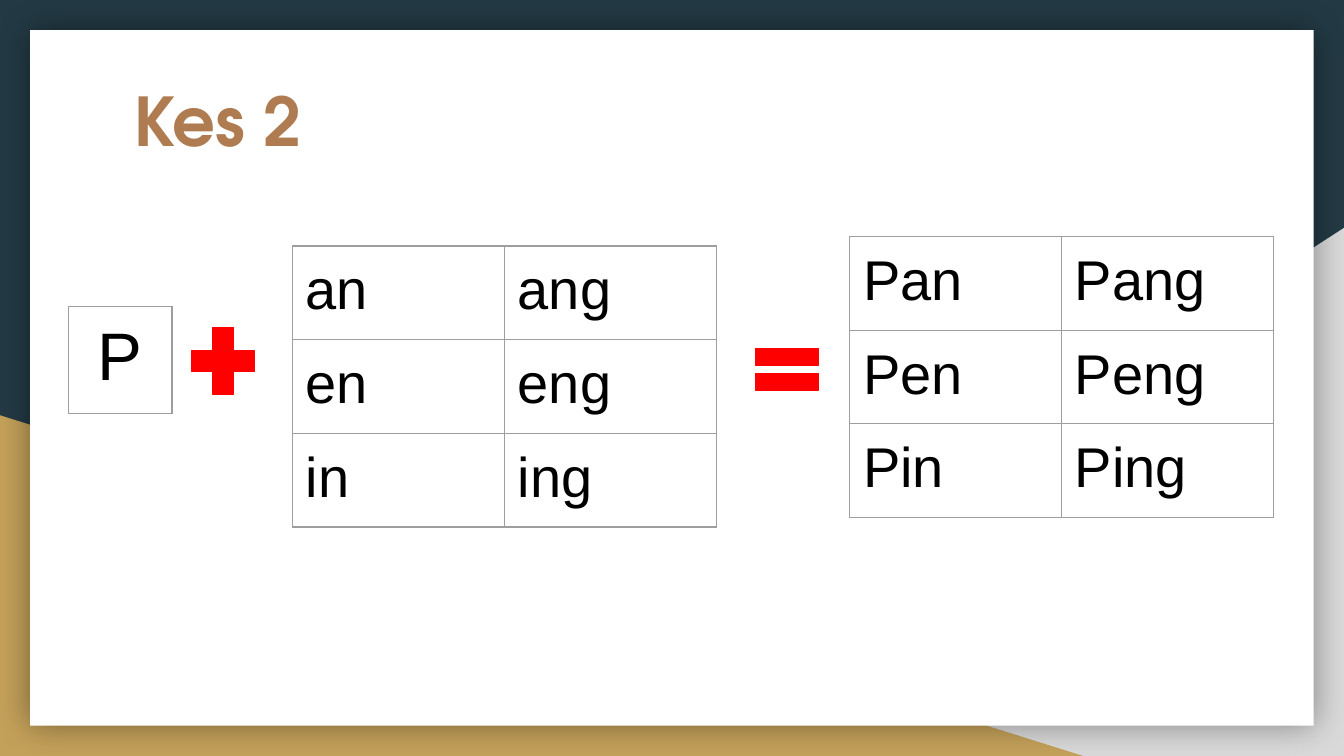
from dataclasses import dataclass

from lxml.etree import SubElement
from pptx import Presentation
from pptx.dml.color import RGBColor as Rgb
from pptx.enum.shapes import MSO_SHAPE as Shape
from pptx.enum.text import MSO_ANCHOR as Anchor, PP_ALIGN as Align
from pptx.oxml.ns import qn
from pptx.util import Cm, Pt


@dataclass(frozen=True)
class Theme:
    """Colours, fonts and sizes of the deck."""
    night: str = "233A44"
    grey: str = "D9D9D9"
    gold: str = "C4A15A"
    paper: str = "FFFFFF"
    copper: str = "AF7B51"
    ink: str = "000000"
    sign: str = "FF0000"
    border: str = "9E9E9E"
    title_font: str = "TeX Gyre Adventor"
    body_font: str = "Arial"
    large: int = 36
    medium: int = 30
    hairline: float = 0.75
    inset: float = 0.25


THEME = Theme()


def set_all(target, values):
    """Set every attribute named in a dict of format values."""
    for name, value in values.items():
        setattr(target, name, value)


def write(frame, text, font, size, color, bold=False, align=Align.LEFT):
    """Write one formatted paragraph into a text frame."""
    para = frame.paragraphs[0]
    para.alignment = align
    span = para.add_run()
    span.text = text
    set_all(span.font, {"name": font, "size": Pt(size), "bold": bold})
    span.font.color.rgb = Rgb.from_string(color)


def margins():
    """Return the shared inner margins of cells and text boxes."""
    return {f"margin_{side}": Cm(THEME.inset)
            for side in ("left", "right", "top", "bottom")}


def add_block(page, kind, box, color):
    """Add a flat, borderless preset shape."""
    shape = page.shapes.add_shape(kind, *map(Cm, box))
    shape.shadow.inherit = False
    shape.fill.solid()
    shape.fill.fore_color.rgb = Rgb.from_string(color)
    shape.line.fill.background()
    return shape


def add_glow(shape):
    """Give a shape a soft shadow on all sides."""
    effects = shape._element.spPr.find(qn("a:effectLst"))
    shadow = SubElement(effects, qn("a:outerShdw"), blurRad=str(Pt(18)),
                        dist="0", dir="0", algn="ctr", rotWithShape="0")
    color = SubElement(shadow, qn("a:srgbClr"), val=THEME.ink)
    SubElement(color, qn("a:alpha"), val="40000")


def add_backdrop(page, box):
    """Fill the page box with two corner triangles and a paper panel."""
    left, top, width, height = box
    page.background.fill.solid()
    page.background.fill.fore_color.rgb = Rgb.from_string(THEME.night)
    right, bottom = left + width, top + height
    corner = add_block(page, Shape.RIGHT_TRIANGLE,
                       (right - 15.44, bottom - 9.98, 15.44, 9.98), THEME.grey)
    corner._element.spPr.find(qn("a:xfrm")).set("flipH", "1")
    add_block(page, Shape.RIGHT_TRIANGLE,
              (left, bottom - 6.44, 20.47, 6.44), THEME.gold)
    edge = 0.57
    panel = add_block(page, Shape.RECTANGLE,
                      (left + edge, top + edge, width - 2 * edge, height - 2 * edge),
                      THEME.paper)
    add_glow(panel)


def add_title(page, box, text):
    """Add the heading in the given box."""
    frame = page.shapes.add_textbox(*map(Cm, box)).text_frame
    set_all(frame, {"word_wrap": True, "vertical_anchor": Anchor.TOP, **margins()})
    write(frame, text, THEME.title_font, THEME.large, THEME.copper, bold=True)


def add_borders(cell):
    """Draw a thin line on each side of a table cell."""
    properties = cell._tc.get_or_add_tcPr()
    for side in ("lnL", "lnR", "lnT", "lnB"):
        line = SubElement(properties, qn(f"a:{side}"), w=str(Pt(THEME.hairline)))
        fill = SubElement(line, qn("a:solidFill"))
        SubElement(fill, qn("a:srgbClr"), val=THEME.border)


def add_syllables(page, box, rows, size=THEME.medium, align=Align.LEFT):
    """Add a plain bordered table that divides its box evenly."""
    left, top, width, height = box
    table = page.shapes.add_table(len(rows), len(rows[0]), *map(Cm, box)).table
    set_all(table, {"first_row": False, "horz_banding": False})
    for column in table.columns:
        column.width = Cm(width / len(rows[0]))
    for row, texts in zip(table.rows, rows):
        row.height = Cm(height / len(rows))
        for cell, text in zip(row.cells, texts):
            add_borders(cell)
            cell.fill.background()
            set_all(cell, {"vertical_anchor": Anchor.TOP, **margins()})
            write(cell.text_frame, text, THEME.body_font, size, THEME.ink, align=align)


def add_sign(page, kind, box, adjustments):
    """Add a red arithmetic sign."""
    sign = add_block(page, kind, box, THEME.sign)
    sign.line.color.rgb = Rgb.from_string(THEME.sign)
    sign.line.width = Pt(THEME.hairline)
    for index, value in enumerate(adjustments):
        sign.adjustments[index] = value


def add_equation(page, box):
    """Lay out initial plus finals equals syllables within the box."""
    left, top, width, height = box
    finals = [(vowel + "n", vowel + "ng") for vowel in "aei"]
    syllables = [["P" + final for final in row] for row in finals]
    grid_width, grid_height = 8.01, 5.07
    add_syllables(page, (left + 4.24, top + 0.18, grid_width, grid_height), finals)
    add_syllables(page, (left + width - grid_width, top, grid_width, grid_height),
                  syllables)
    add_syllables(page, (left, top + 1.32, 1.96, 1.93), [["P"]],
                  THEME.large, Align.CENTER)
    add_sign(page, Shape.MATH_PLUS, (left + 2.12, top + 1.5, 1.62, 1.72), [0.235])
    add_sign(page, Shape.MATH_EQUAL, (left + 12.77, top + 1.85, 1.62, 1.33),
             [0.235, 0.118])


def main():
    """Build and save the deck."""
    width, height = 25.4, 14.29
    deck = Presentation()
    set_all(deck, {"slide_width": Cm(width), "slide_height": Cm(height)})
    page = deck.slides.add_slide(deck.slide_layouts[6])
    add_backdrop(page, (0, 0, width, height))
    add_title(page, (2.29, 1.25, 20.85, 2.64), "Kes 2")
    add_equation(page, (1.29, 4.47, 22.78, 5.25))
    deck.save("out.pptx")


if __name__ == "__main__":
    main()
